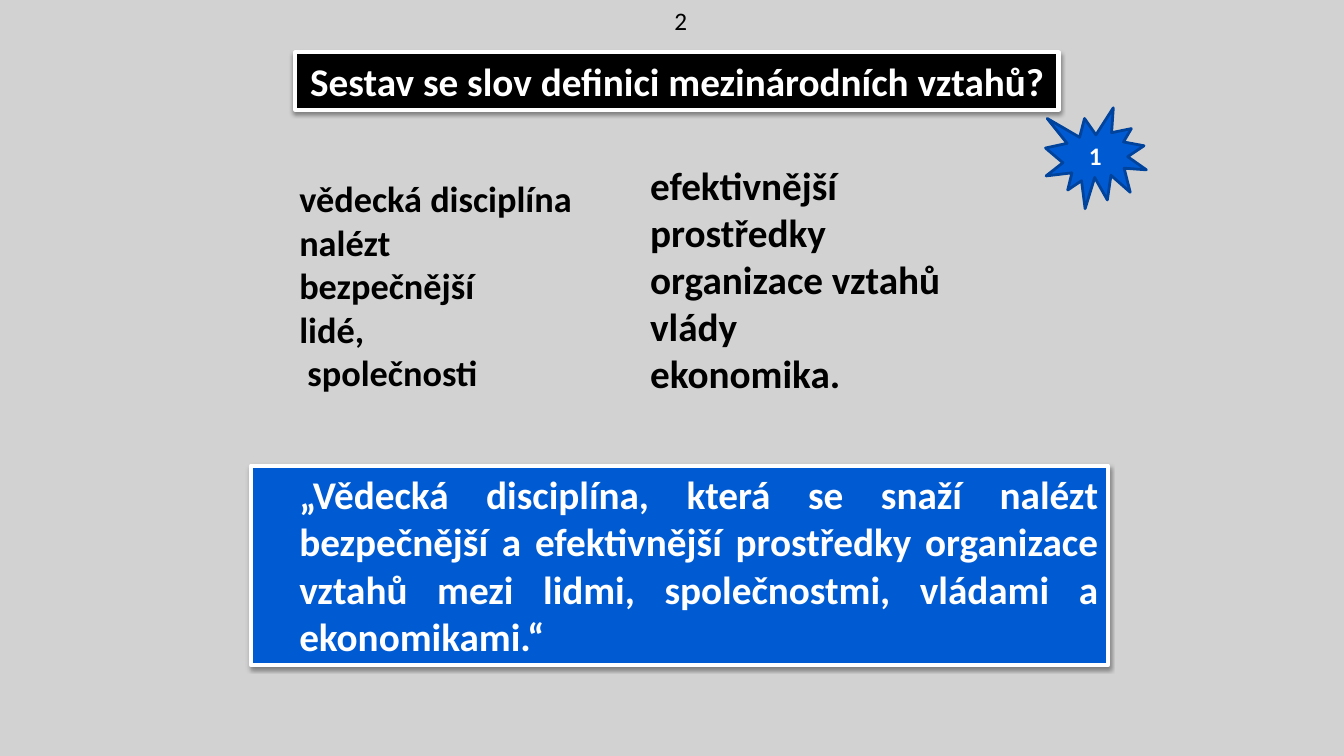
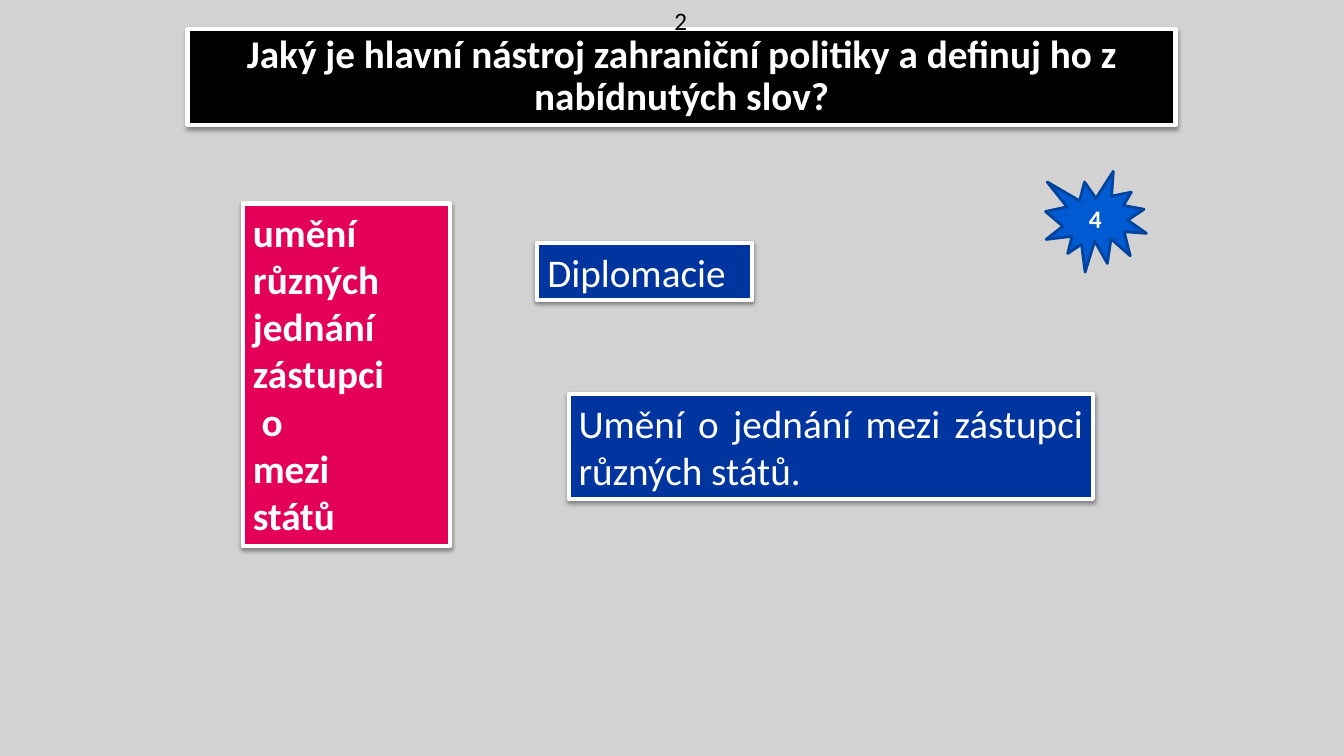
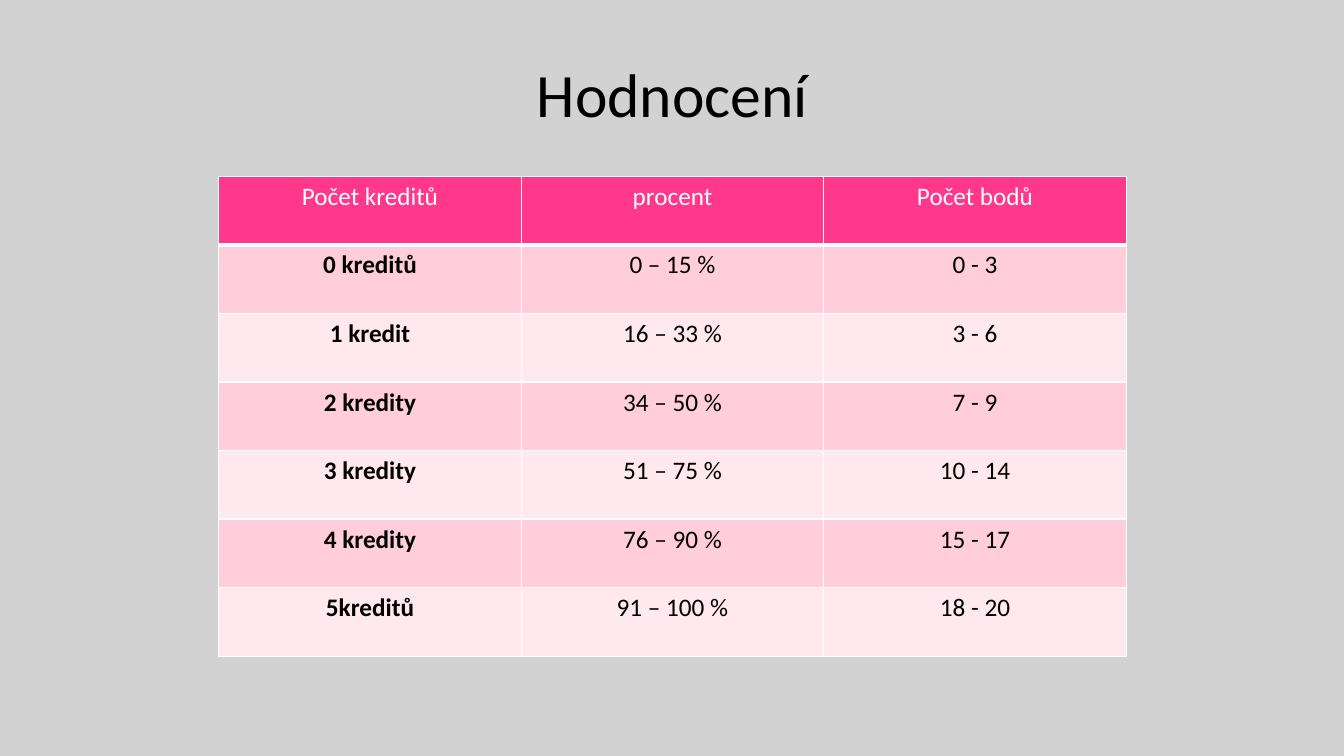
from dataclasses import dataclass

from lxml.etree import SubElement
from pptx import Presentation
from pptx.dml.color import RGBColor
from pptx.enum.shapes import MSO_SHAPE
from pptx.enum.text import MSO_ANCHOR, PP_ALIGN
from pptx.oxml.ns import qn
from pptx.util import Inches, Pt


@dataclass(frozen=True)
class Theme:
    font: str = "Calibri"
    background: str = "D2D2D2"
    black: str = "000000"
    white: str = "FFFFFF"
    blue: str = "005BD3"
    blue_edge: str = "00439C"
    navy: str = "00349E"
    crimson: str = "E40059"
    header: str = "FF388C"
    bands: tuple = ("FFCEDA", "FFE8EE")
    heading: float = 44
    body: float = 28
    list_body: float = 25.9
    small: float = 18
    frame: float = 3
    seal_edge: float = 2


THEME = Theme()

# Boxes are left, top, width, height in inches.
DEFINITION = {
    "question": ("Sestav se slov definici mezinárodních vztahů?", (2.93, 0.52, 7.57, 0.57)),
    "left_words": (["vědecká disciplína", "nalézt", "bezpečnější", "lidé,", " společnosti"],
                   (2.49, 1.7, 3.62, 2.13)),
    "right_words": (["efektivnější", "prostředky", "organizace vztahů", "vlády", "ekonomika."],
                    (6.35, 1.55, 3.11, 2.76)),
    "answer": ("„Vědecká disciplína, která se snaží nalézt bezpečnější a efektivnější "
               "prostředky organizace vztahů mezi lidmi, společnostmi, vládami a "
               "ekonomikami.“", (2.49, 4.62, 8.5, 1.98)),
    "points": "2",
    "seal": ("1", 1.07),
}
DIPLOMACY = {
    "question": ("Jaký je hlavní nástroj zahraniční politiky a definuj ho z nabídnutých slov?",
                 (1.86, 0.29, 9.8, 0.95)),
    "words": (["umění", "různých", "jednání", "zástupci", " o", "mezi", "států"],
              (2.41, 2.02, 2.05, 3.4)),
    "answers": [("Diplomacie", (5.33, 2.41, 2.13, 0.57)),
                ("Umění o jednání mezi zástupci různých států.", (5.64, 3.91, 5.2, 1.04))],
    "points": "2",
    "seal": ("4", 1.7),
}
GRADING_TITLE = "Hodnocení"
GRADING = [
    ("Počet kreditů", "procent", "Počet bodů"),
    ("0 kreditů", "0 – 15 %", "0 - 3"),
    ("1 kredit", "16 – 33 %", "3 - 6"),
    ("2 kredity", "34 – 50 %", "7 - 9"),
    ("3 kredity", "51 – 75 %", "10 - 14"),
    ("4 kredity", "76 – 90 %", "15 - 17"),
    ("5kreditů", "91 – 100 %", "18 - 20"),
]
LIST_INDENT = 0.38


def rgb(color):
    return RGBColor.from_string(color)


def write(tf, text, size, color=THEME.black, bold=False, align=PP_ALIGN.LEFT, indent=0,
          spacing=None):
    """Fill a text frame with one paragraph per line and format it."""
    tf.word_wrap = True
    tf.text = text if isinstance(text, str) else "\n".join(text)
    for p in tf.paragraphs:
        p.alignment = align
        if spacing:
            p.line_spacing = spacing
        if indent:
            p._p.get_or_add_pPr().set("marL", str(Inches(indent)))
        for r in p.runs:
            r.font.name = THEME.font
            r.font.size = Pt(size)
            r.font.bold = bold
            r.font.color.rgb = rgb(color)


def add_text(s, text, box, size=THEME.body, anchor=MSO_ANCHOR.TOP, **style):
    tf = s.shapes.add_textbox(*map(Inches, box)).text_frame
    write(tf, text, size, **style)
    tf.vertical_anchor = anchor


def add_filled(s, kind, box, fill, line, line_width):
    sp = s.shapes.add_shape(kind, *map(Inches, box))
    sp.shadow.inherit = False
    sp.fill.solid()
    sp.fill.fore_color.rgb = rgb(fill)
    sp.line.color.rgb = rgb(line)
    sp.line.width = Pt(line_width)
    return sp


def add_card(s, text, box, fill, **style):
    """White-framed rectangle with a soft shadow below."""
    sp = add_filled(s, MSO_SHAPE.RECTANGLE, box, fill, THEME.white, THEME.frame)
    effects = sp._element.spPr.find(qn("a:effectLst"))
    shadow = SubElement(effects, qn("a:outerShdw"), blurRad=str(Pt(3.1)), dist=str(Pt(1.6)),
                        dir="5400000", rotWithShape="0")
    color = SubElement(shadow, qn("a:srgbClr"), val=THEME.black)
    SubElement(color, qn("a:alpha"), val="38000")
    write(sp.text_frame, text, THEME.body, THEME.white, **style)
    sp.text_frame.vertical_anchor = MSO_ANCHOR.TOP


def add_question(s, text, box, spacing=None):
    add_card(s, text, box, THEME.black, bold=True, align=PP_ALIGN.CENTER, spacing=spacing)


def add_marks(s, points, seal):
    """Points at the top edge and the numbered seal on the right."""
    number, top = seal
    add_text(s, points, (6.59, 0, 0.33, 0.4), THEME.small)
    sp = add_filled(s, MSO_SHAPE.EXPLOSION1, (10.37, top, 1, 1), THEME.blue,
                    THEME.blue_edge, THEME.seal_edge)
    write(sp.text_frame, number, THEME.small, THEME.white, bold=True, align=PP_ALIGN.CENTER)
    sp.text_frame.vertical_anchor = MSO_ANCHOR.MIDDLE


def add_borders(cell, bottom):
    tcPr = cell._tc.get_or_add_tcPr()
    for side, width in (("lnL", 1), ("lnR", 1), ("lnT", 1), ("lnB", bottom)):
        ln = SubElement(tcPr, qn(f"a:{side}"), w=str(Pt(width)))
        SubElement(SubElement(ln, qn("a:solidFill")), qn("a:srgbClr"), val=THEME.white)


def add_grading_table(s, rows, col_width=3, row_height=0.68):
    n_rows, n_cols = len(rows), len(rows[0])
    box = (2.17, 1.75, n_cols * col_width, n_rows * row_height)
    table = s.shapes.add_table(n_rows, n_cols, *map(Inches, box)).table
    for i, row in enumerate(rows):
        header = i == 0
        for j, text in enumerate(row):
            cell = table.cell(i, j)
            add_borders(cell, bottom=3 if header else 1)
            cell.fill.solid()
            cell.fill.fore_color.rgb = rgb(THEME.header if header else THEME.bands[(i - 1) % 2])
            write(cell.text_frame, text, THEME.small, THEME.white if header else THEME.black,
                  bold=j == 0 and not header, align=PP_ALIGN.CENTER)


def build_definition(s):
    add_text(s, *DEFINITION["left_words"], THEME.list_body, bold=True, indent=LIST_INDENT)
    add_question(s, *DEFINITION["question"])
    add_card(s, *DEFINITION["answer"], THEME.blue, bold=True, align=PP_ALIGN.JUSTIFY,
             indent=LIST_INDENT)
    add_text(s, *DEFINITION["right_words"], bold=True)
    add_marks(s, DEFINITION["points"], DEFINITION["seal"])


def build_diplomacy(s):
    add_question(s, *DIPLOMACY["question"], spacing=0.9)
    add_card(s, *DIPLOMACY["words"], THEME.crimson, bold=True, align=PP_ALIGN.JUSTIFY)
    for text, box in DIPLOMACY["answers"]:
        add_card(s, text, box, THEME.navy, align=PP_ALIGN.JUSTIFY)
    add_marks(s, DIPLOMACY["points"], DIPLOMACY["seal"])


def build_grading(s):
    add_text(s, GRADING_TITLE, (0.67, 0.3, 12, 1.25), THEME.heading,
             anchor=MSO_ANCHOR.MIDDLE, align=PP_ALIGN.CENTER)
    add_grading_table(s, GRADING)


def main():
    prs = Presentation()
    prs.slide_width, prs.slide_height = Inches(13.33), Inches(7.5)
    background = prs.slide_master.background.fill
    background.solid()
    background.fore_color.rgb = rgb(THEME.background)
    for build in (build_definition, build_diplomacy, build_grading):
        build(prs.slides.add_slide(prs.slide_layouts[6]))
    prs.save("out.pptx")


if __name__ == "__main__":
    main()
